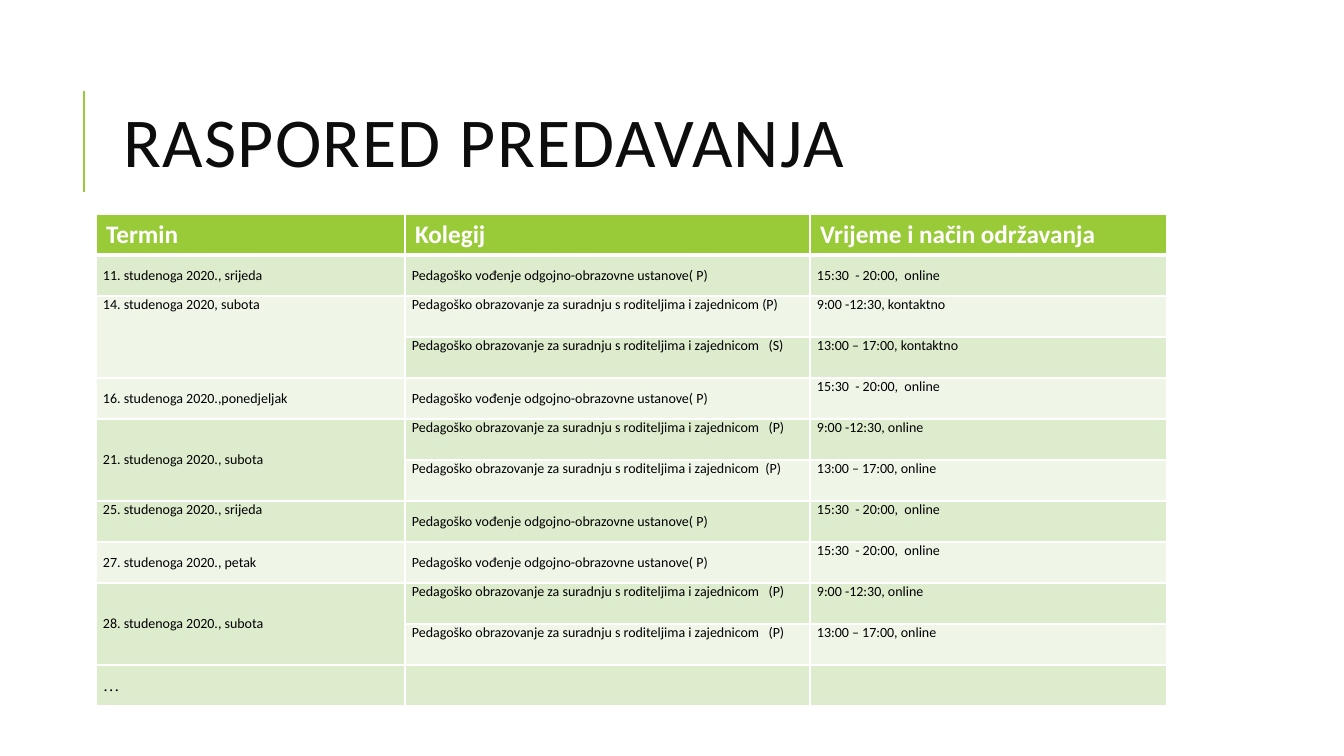
from lxml import etree
from pptx import Presentation
from pptx.dml.color import RGBColor
from pptx.enum.shapes import MSO_CONNECTOR
from pptx.enum.text import MSO_ANCHOR, MSO_AUTO_SIZE, PP_ALIGN
from pptx.oxml.ns import qn
from pptx.util import Pt

TOP, MIDDLE = MSO_ANCHOR.TOP, MSO_ANCHOR.MIDDLE
LEFT = PP_ALIGN.LEFT
STRAIGHT = MSO_CONNECTOR.STRAIGHT
NO_AUTOFIT = MSO_AUTO_SIZE.NONE

GREEN = RGBColor(0x99, 0xCB, 0x38)
BAND_DARK = RGBColor(0xDE, 0xEC, 0xCE)
BAND_LIGHT = RGBColor(0xEF, 0xF6, 0xE8)
WHITE = RGBColor(0xFF, 0xFF, 0xFF)
BLACK = RGBColor(0, 0, 0)
TITLE_INK = RGBColor(0x0D, 0x0D, 0x0D)

TITLE = "RASPORED PREDAVANJA"
HEADER = ("Termin", "Kolegij", "Vrijeme i način održavanja")
LEADERSHIP = "Pedagoško vođenje odgojno-obrazovne ustanove( P)"
PARENTS = "Pedagoško obrazovanje za suradnju s roditeljima i zajednicom"
EVENING = "15:30  - 20:00,  online"
MORNING = "9:00 -12:30, online"
AFTERNOON = "13:00 – 17:00, online"

# Each date: text, anchor, then its lectures as (course, anchor, time, anchor)
SCHEDULE = [
    ("11. studenoga 2020., srijeda", MIDDLE, [(LEADERSHIP, MIDDLE, EVENING, MIDDLE)]),
    ("14. studenoga 2020, subota", TOP, [
        (PARENTS + " (P)", TOP, "9:00 -12:30, kontaktno", TOP),
        (PARENTS + "   (S)", TOP, "13:00 – 17:00, kontaktno", TOP)]),
    ("16. studenoga 2020.,ponedjeljak", MIDDLE, [(LEADERSHIP, MIDDLE, EVENING, TOP)]),
    ("21. studenoga 2020., subota", MIDDLE, [
        (PARENTS + "   (P)", TOP, MORNING, TOP),
        (PARENTS + "  (P)", TOP, AFTERNOON, TOP)]),
    ("25. studenoga 2020., srijeda", TOP, [(LEADERSHIP, MIDDLE, EVENING, TOP)]),
    ("27. studenoga 2020., petak", MIDDLE, [(LEADERSHIP, MIDDLE, EVENING, TOP)]),
    ("28. studenoga 2020., subota", MIDDLE, [
        (PARENTS + "   (P)", TOP, MORNING, TOP),
        (PARENTS + "   (P)", TOP, AFTERNOON, TOP)]),
    ("…", MIDDLE, [("", TOP, "", TOP)]),
]

PAGE = (1344, 756)
TITLE_BOX = (113, 65, 1071, 165)
ACCENT_LINE = (84, 192, 84, 91)
TABLE_LEFT, TABLE_TOP = 96, 214
COLUMN_WIDTHS = (309, 405, 357)
ROW_HEIGHT = 41
CELL_INSET = 7


def px(length):
    return round(length * 914400 / 100.8)


def style_text(para, size, colour, bold=False, font="Calibri"):
    para.alignment = LEFT
    for span in para.runs:
        span.font.name = font
        span.font.size = Pt(size)
        span.font.bold = bold
        span.font.color.rgb = colour


def set_borders(cell, top, bottom):
    """Draw white borders; top and bottom widths are in points."""
    properties = cell._tc.get_or_add_tcPr()
    for side, width in (("L", 1), ("R", 1), ("T", top), ("B", bottom)):
        line = etree.SubElement(properties, qn(f"a:ln{side}"), w=str(Pt(width)))
        fill = etree.SubElement(line, qn("a:solidFill"))
        etree.SubElement(fill, qn("a:srgbClr"), val=str(WHITE))


def fill_cell(cell, text, anchor):
    cell.text = text
    cell.vertical_anchor = anchor
    cell.margin_left = cell.margin_right = px(CELL_INSET)
    cell.margin_top = cell.margin_bottom = 0
    size, font = (12, "Times New Roman") if text == "…" else (10, "Calibri")
    style_text(cell.text_frame.paragraphs[0], size, BLACK, font=font)


def add_title(page):
    title = page.shapes.title
    title.left, title.top, title.width, title.height = map(px, TITLE_BOX)
    frame = title.text_frame
    frame.text = TITLE
    frame.word_wrap = True
    frame.auto_size = NO_AUTOFIT
    frame.vertical_anchor = MIDDLE
    para = frame.paragraphs[0]
    para.line_spacing = 0.8
    style_text(para, 50, TITLE_INK)
    para.runs[0].font._element.set("spc", "100")


def add_accent_line(page):
    line = page.shapes.add_connector(STRAIGHT, *map(px, ACCENT_LINE))
    line.line.color.rgb = GREEN
    line.line.width = Pt(1.5)
    etree.SubElement(line._element.spPr, qn("a:effectLst"))


def add_schedule(page):
    row_count = 1 + sum(len(lectures) for _, _, lectures in SCHEDULE)
    table = page.shapes.add_table(
        row_count, len(HEADER), px(TABLE_LEFT), px(TABLE_TOP),
        px(sum(COLUMN_WIDTHS)), px(ROW_HEIGHT * row_count)).table
    for column, width in zip(table.columns, COLUMN_WIDTHS):
        column.width = px(width)

    for index, row in enumerate(table.rows):
        row.height = px(ROW_HEIGHT)
        band = BAND_DARK if index % 2 else BAND_LIGHT
        for cell in row.cells:
            set_borders(cell, 3 if index == 1 else 1, 3 if index == 0 else 1)
            cell.fill.solid()
            cell.fill.fore_color.rgb = band if index else GREEN

    for column, heading in enumerate(HEADER):
        cell = table.cell(0, column)
        cell.text = heading
        style_text(cell.text_frame.paragraphs[0], 18, WHITE, bold=True)

    first = 1
    for date, date_anchor, lectures in SCHEDULE:
        last = first + len(lectures) - 1
        if last > first:
            table.cell(first, 0).merge(table.cell(last, 0))
        fill_cell(table.cell(first, 0), date, date_anchor)
        for row, (course, course_anchor, time, time_anchor) in enumerate(lectures, first):
            fill_cell(table.cell(row, 1), course, course_anchor)
            fill_cell(table.cell(row, 2), time, time_anchor)
        first = last + 1


def main():
    deck = Presentation()
    deck.slide_width, deck.slide_height = map(px, PAGE)
    page = deck.slides.add_slide(deck.slide_layouts[5])
    add_accent_line(page)
    add_title(page)
    add_schedule(page)
    deck.save("out.pptx")


if __name__ == "__main__":
    main()
